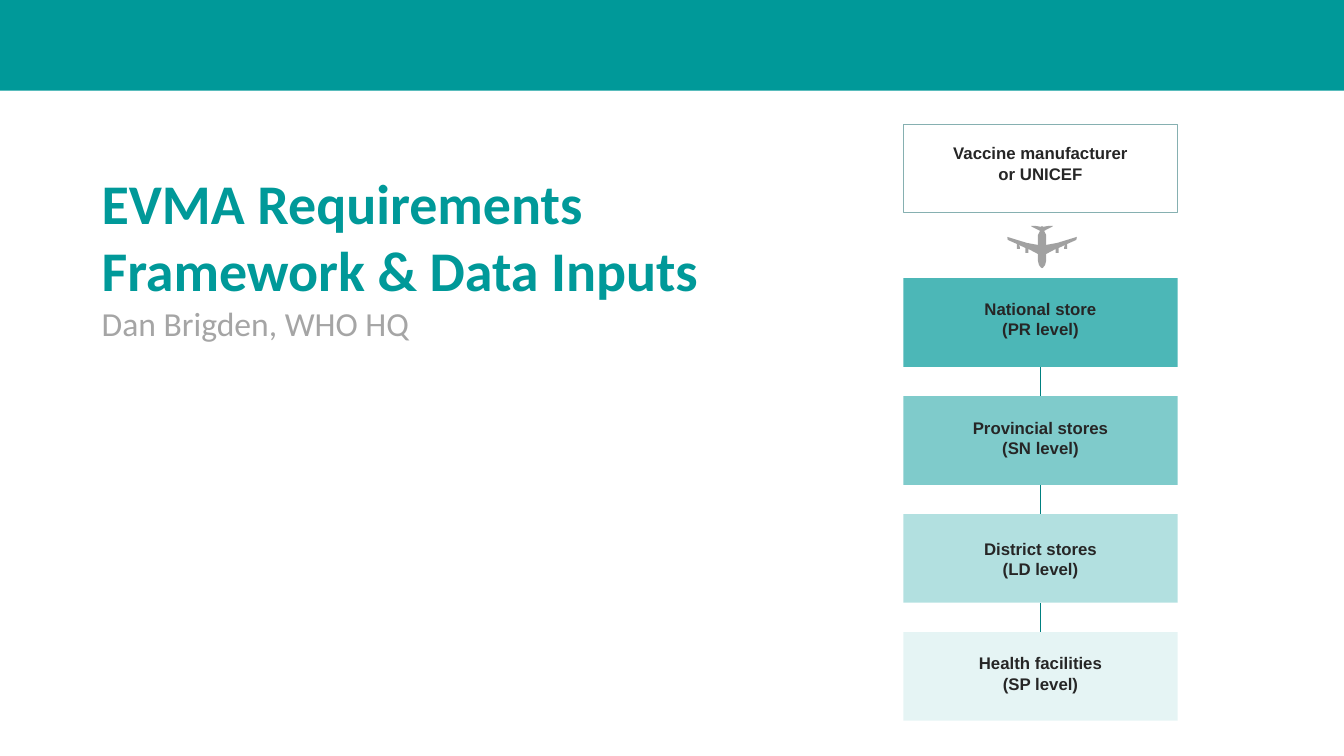
from lxml import etree
from pptx import Presentation
from pptx.dml.color import RGBColor
from pptx.enum import shapes, text
from pptx.oxml import ns
from pptx.util import Inches, Pt

TEAL = RGBColor(0x00, 0x99, 0x99)
DARK_TEAL = RGBColor(0x00, 0x80, 0x80)
PALE_TEAL = RGBColor(0x86, 0xB0, 0xB1)
GREY = RGBColor(0xA5, 0xA5, 0xA5)
INK = RGBColor(0x26, 0x26, 0x26)
BLACK = RGBColor(0x00, 0x00, 0x00)
WHITE = RGBColor(0xFF, 0xFF, 0xFF)

BOX_LEFT, BOX_W, BOX_H = 8.96, 2.72, 0.88
STORE_TOP, STORE_STEP = 2.76, 1.17
STORES = [
    (("National store", "(PR level)"), 70, 0.2),
    (("Provincial stores", "(SN level)"), 50, 0.21),
    (("District stores", "(LD level)"), 30, 0.24),
    (("Health facilities", "(SP level)"), 10, 0.21),
]

PLANE_X = 10.335
PLANE_HALF = [
    (0, 2.24), (0.01, 2.25), (0.07, 2.24), (0.11, 2.24), (0.1, 2.25),
    (0.02, 2.29), (0.04, 2.33), (0.04, 2.43), (0.15, 2.41), (0.345, 2.35),
    (0.34, 2.38), (0.25, 2.42), (0.25, 2.47), (0.22, 2.47), (0.22, 2.45),
    (0.23, 2.43), (0.165, 2.46), (0.165, 2.51), (0.135, 2.51), (0.135, 2.47),
    (0.04, 2.52), (0.04, 2.59), (0.03, 2.63), (0.01, 2.655), (0, 2.66),
]


def set_fill(sp, color, alpha=100):
    sp.shadow.inherit = False
    sp.fill.solid()
    sp.fill.fore_color.rgb = color
    if alpha < 100:
        clr = sp.fill._xPr.find(".//" + ns.qn("a:srgbClr"))
        etree.SubElement(clr, ns.qn("a:alpha"), val=str(alpha * 1000))
    sp.line.fill.background()


def write(p, words, font="Arial", size=12, color=INK, bold=True,
          align=text.PP_ALIGN.CENTER):
    p.alignment = align
    r = p.add_run()
    r.text = words
    r.font.name = font
    r.font.size = Pt(size)
    r.font.bold = bold
    r.font.color.rgb = color


def add_rect(s, x, y, w, h, color, alpha=100):
    sp = s.shapes.add_shape(shapes.MSO_SHAPE.RECTANGLE,
                            Inches(x), Inches(y), Inches(w), Inches(h))
    set_fill(sp, color, alpha)
    return sp


def add_box(s, y, lines, inset, color, alpha):
    sp = add_rect(s, BOX_LEFT, y, BOX_W, BOX_H, color, alpha)
    tf = sp.text_frame
    tf.word_wrap = True
    tf.vertical_anchor = text.MSO_ANCHOR.TOP
    tf.margin_left = tf.margin_right = tf.margin_bottom = 0
    tf.margin_top = Inches(inset)
    write(tf.paragraphs[0], lines[0])
    for line in lines[1:]:
        write(tf.add_paragraph(), line)
    return sp


def add_link(s, upper, lower):
    c = s.shapes.add_connector(shapes.MSO_CONNECTOR.STRAIGHT, 0, 0, 0, 0)
    c.begin_connect(upper, 2)
    c.end_connect(lower, 0)
    c.line.color.rgb = DARK_TEAL
    c.line.width = Pt(1.25)
    etree.SubElement(c._element.spPr, ns.qn("a:effectLst"))


def add_plane(s):
    right = [(PLANE_X + dx, y) for dx, y in PLANE_HALF]
    left = [(PLANE_X - dx, y) for dx, y in reversed(PLANE_HALF[1:-1])]
    points = [(Inches(x), Inches(y)) for x, y in right + left]
    fb = s.shapes.build_freeform(*points[0])
    fb.add_line_segments(points[1:], close=True)
    set_fill(fb.convert_to_shape(), BLACK, 37)


def add_title(s):
    tb = s.shapes.add_textbox(Inches(0.91), Inches(1.62), Inches(6.36), Inches(1.85))
    tf = tb.text_frame
    tf.word_wrap = True
    left = text.PP_ALIGN.LEFT
    write(tf.paragraphs[0], "EVMA Requirements Framework & Data Inputs",
          font="Calibri", size=40, color=TEAL, align=left)
    write(tf.add_paragraph(), "Dan Brigden, WHO HQ",
          font="Calibri", size=24, color=GREY, bold=False, align=left)


def main():
    prs = Presentation()
    prs.slide_width, prs.slide_height = Inches(13.33), Inches(7.5)
    s = prs.slides.add_slide(prs.slide_layouts[6])
    add_rect(s, 0, 0, 13.33, 0.9, TEAL)
    add_title(s)

    source = add_box(s, 1.23, ("Vaccine manufacturer", "or UNICEF"), 0.19, WHITE, 85)
    source.line.color.rgb = PALE_TEAL
    source.line.width = Pt(0.5)

    stores = [add_box(s, STORE_TOP + i * STORE_STEP, lines, inset, TEAL, alpha)
              for i, (lines, alpha, inset) in enumerate(STORES)]
    for upper, lower in zip(stores, stores[1:]):
        add_link(s, upper, lower)
    add_plane(s)
    prs.save("out.pptx")


if __name__ == "__main__":
    main()
